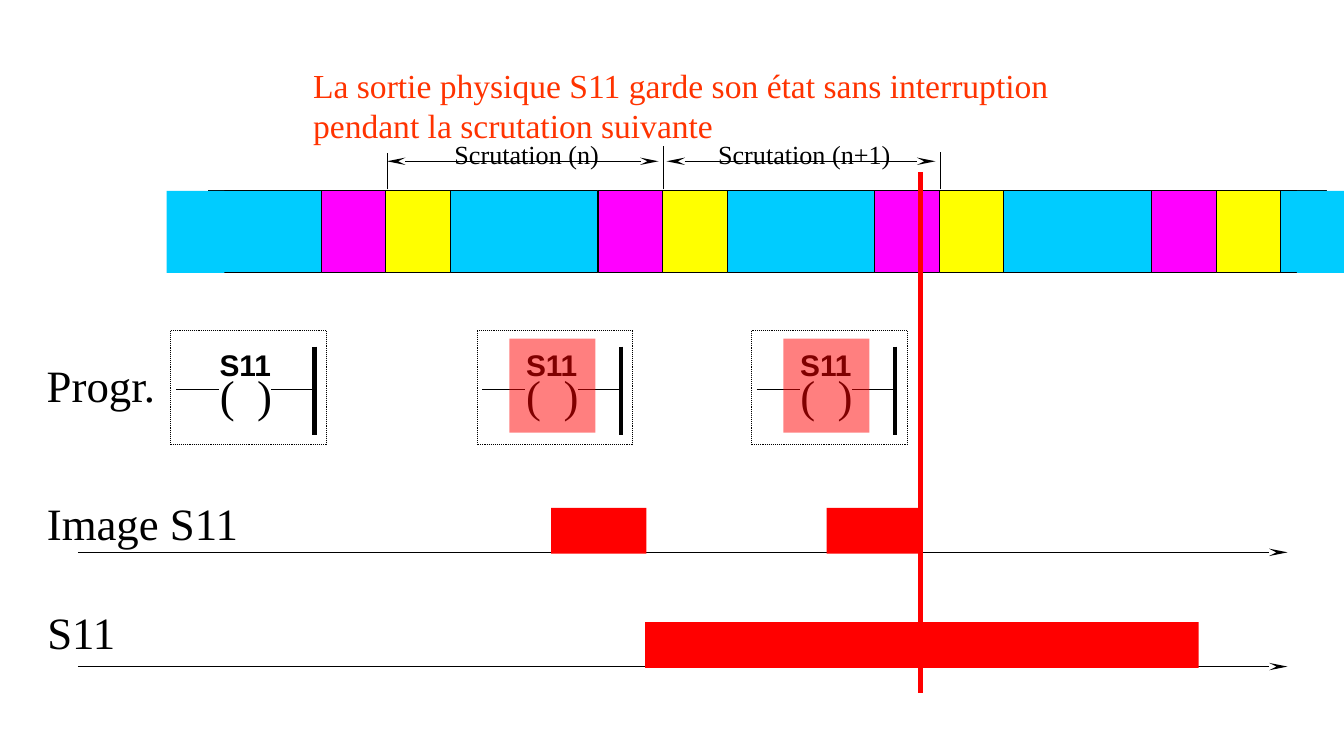
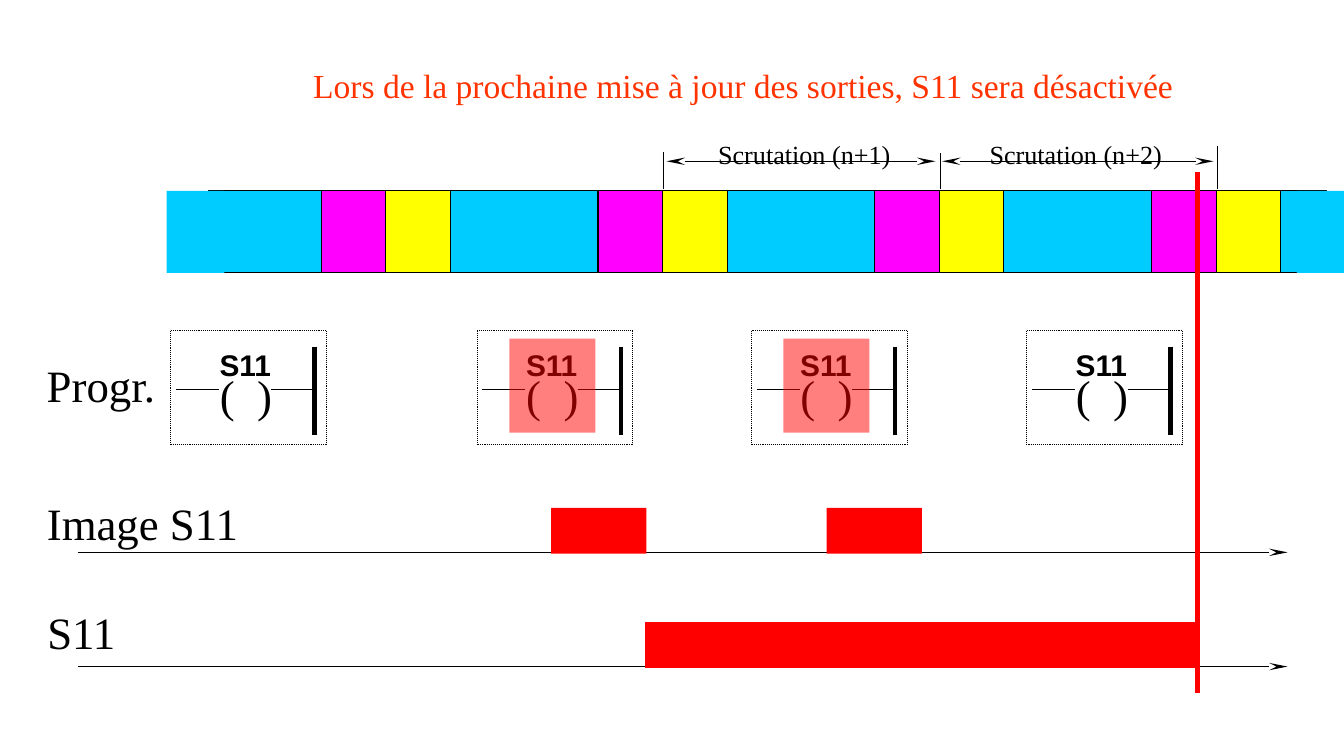
from collections import namedtuple

from lxml import etree
from pptx import Presentation
from pptx import util as u
from pptx.dml import color
from pptx.enum import dml, shapes, text
from pptx.oxml import ns

BLACK, WHITE, RED, ORANGE = "000000", "FFFFFF", "FF0000", "FF3300"
CYAN, MAGENTA, YELLOW = "00CCFF", "FF00FF", "FFFF00"
SERIF, SANS = "Times New Roman", "Arial"

PERIOD, PHASE, FIRST_CYCLE = 2.06, 0.48, 2.87
BAND_TOP, BAND_HEIGHT = 1.42, 0.61
AXIS_LEFT, AXIS_RIGHT = 0.58, 9.58
RUNG_LEFTS = (1.27, 3.55, 5.59, 7.64)
ACTIVE_RUNGS = (1, 2)
ROW_LABELS = (("Progr.", 0.24, 2.61, 1.02), ("Image S11", 0.24, 3.64, 1.64),
              ("S11", 0.25, 4.45, 0.71))
PULSES = ((4.1, 3.78, 0.71), (6.15, 3.78, 0.71),
          (4.8, 4.63, PERIOD), (6.86, 4.63, PERIOD))

Scan = namedtuple("Scan", "label start end label_left label_width")
SCAN_N = Scan("Scrutation (n)", 2.88, 4.9, 3.28, 1.28)
SCAN_N1 = Scan("Scrutation (n+1)", 4.96, 6.96, 5.24, 1.49)
SCAN_N2 = Scan("Scrutation (n+2)", 7.01, 9.03, 7.26, 1.49)


def rgb(value):
    return color.RGBColor.from_string(value)


def inches(*lengths):
    return [u.Inches(length) for length in lengths]


def apply(target, values):
    for name, value in values.items():
        setattr(target, name, value)


def place(box, *lengths):
    apply(box, dict(zip(("left", "top", "width", "height"), inches(*lengths))))


def format_text(frame, words, size, shade=BLACK, font=SERIF, bold=False,
                align=text.PP_ALIGN.CENTER, wrap=False):
    frame.text = words
    apply(frame, {"word_wrap": wrap, "vertical_anchor": text.MSO_ANCHOR.TOP,
                  "auto_size": text.MSO_AUTO_SIZE.SHAPE_TO_FIT_TEXT})
    for paragraph in frame.paragraphs:
        paragraph.alignment = align
        for run in paragraph.runs:
            apply(run.font, {"name": font, "size": u.Pt(size), "bold": bold})
            run.font.color.rgb = rgb(shade)


def add_label(parent, words, left, top, width, height, size, **style):
    label = parent.add_textbox(*inches(left, top, width, height))
    format_text(label.text_frame, words, size, **style)


def add_block(parent, left, top, width, height, fill, border=None, dash=None, opacity=None):
    block = parent.add_shape(shapes.MSO_SHAPE.RECTANGLE, *inches(left, top, width, height))
    block.shadow.inherit = False
    block.fill.solid()
    block.fill.fore_color.rgb = rgb(fill)
    if opacity:
        shade = block._element.spPr.find(".//" + ns.qn("a:srgbClr"))
        etree.SubElement(shade, ns.qn("a:alpha"), val=str(opacity * 1000))
    if border:
        block.line.color.rgb = rgb(BLACK)
        apply(block.line, {"width": u.Pt(border), "dash_style": dash})
    else:
        block.line.fill.background()


def add_line(parent, x1, y1, x2, y2, width, shade=BLACK, arrows=()):
    line = parent.add_connector(shapes.MSO_CONNECTOR.STRAIGHT, *inches(x1, y1, x2, y2))
    line.line.color.rgb = rgb(shade)
    line.line.width = u.Pt(width)
    outline = line._element.spPr.find(ns.qn("a:ln"))
    for end in arrows:
        etree.SubElement(outline, ns.qn(f"a:{end}"), type="stealth", w="sm", len="lg")
    etree.SubElement(line._element.spPr, ns.qn("a:effectLst"))


def add_title(slide, words, height):
    title = slide.shapes.title
    format_text(title.text_frame, words, 18, shade=ORANGE,
                align=text.PP_ALIGN.LEFT, wrap=True)
    place(title, 2.23, 0.43, 7.77, height)


def add_cycle_band(parent):
    work = PERIOD - 2 * PHASE
    phases = [(1.55, 0.84, CYAN), (FIRST_CYCLE - PHASE, PHASE, MAGENTA)]
    for cycle in range(3):
        start = FIRST_CYCLE + cycle * PERIOD
        phases += [(start, PHASE, YELLOW), (start + PHASE, work, CYAN),
                   (start + PHASE + work, PHASE, MAGENTA)]
    last = FIRST_CYCLE + 3 * PERIOD
    phases += [(last, PHASE, YELLOW), (last + PHASE, 0.34, CYAN)]
    for left, width, fill in phases:
        add_block(parent, left, BAND_TOP, width, BAND_HEIGHT, fill, border=0.5)
    for left, width in ((1.24, 0.43), (9.65, 0.35)):
        add_block(parent, left, BAND_TOP, width, BAND_HEIGHT, CYAN)


def add_scans(parent, scans, first_cycle, tick_tops):
    for index, top in enumerate(tick_tops, first_cycle):
        boundary = FIRST_CYCLE + 0.01 + index * PERIOD
        add_line(parent, boundary, 1.41, boundary, top, 0.5)
    for scan in scans:
        add_line(parent, scan.start, 1.2, scan.end, 1.2, 0.75, arrows=("headEnd", "tailEnd"))
        add_label(parent, scan.label, scan.label_left, 0.98, scan.label_width, 0.34, 14)


def add_rung(parent, left, active):
    rung = parent.add_group_shape().shapes
    rail = left + 1.07
    add_block(rung, left, 2.46, 1.16, 0.85, WHITE, border=0.5,
              dash=dml.MSO_LINE.ROUND_DOT)
    for lead in (left + 0.04, rail - 0.32):
        add_line(rung, lead, 2.9, lead + 0.32, 2.9, 0.5)
    add_line(rung, rail, 2.58, rail, 3.24, 2.5)
    add_label(rung, "(  )", left + 0.26, 2.69, 0.6, 0.51, 24)
    add_label(rung, "S11", left + 0.26, 2.53, 0.59, 0.37, 16, font=SANS, bold=True)
    if active:
        add_block(parent, left + 0.24, 2.52, 0.64, 0.7, RED, opacity=50)


def add_timing_slide(deck, title, title_height, scans, first_cycle, tick_tops,
                     rung_count, cursor):
    slide = deck.slides.add_slide(deck.slide_layouts[5])
    parent = slide.shapes
    add_title(slide, title, title_height)
    for axis in (4.11, 4.96):
        add_line(parent, AXIS_LEFT, axis, AXIS_RIGHT, axis, 0.25, arrows=("tailEnd",))
    add_cycle_band(parent)
    add_scans(parent, scans, first_cycle, tick_tops)
    for words, left, top, width in ROW_LABELS:
        add_label(parent, words, left, top, width, 0.51, 24)
    for index, left in enumerate(RUNG_LEFTS[:rung_count]):
        add_rung(parent, left, index in ACTIVE_RUNGS)
    for left, top, width in PULSES:
        add_block(parent, left, top, width, 0.34, RED)
    add_line(parent, cursor, 1.28, cursor, 5.16, 2.5, shade=RED)


def main():
    deck = Presentation()
    deck.slide_width = u.Inches(10)
    deck.slide_height = u.Inches(10 * 9 / 16)
    add_timing_slide(
        deck,
        "La sortie physique S11 garde son état sans interruption\n"
        "pendant la scrutation suivante",
        0.71, (SCAN_N, SCAN_N1), 0, (1.14, 1.09, 1.13), 3, 6.85)
    add_timing_slide(
        deck,
        "Lors de la prochaine mise à jour des sorties, S11 sera désactivée",
        0.4, (SCAN_N1, SCAN_N2), 1, (1.13, 1.14, 1.09), 4, 8.91)
    deck.save("out.pptx")


if __name__ == "__main__":
    main()
